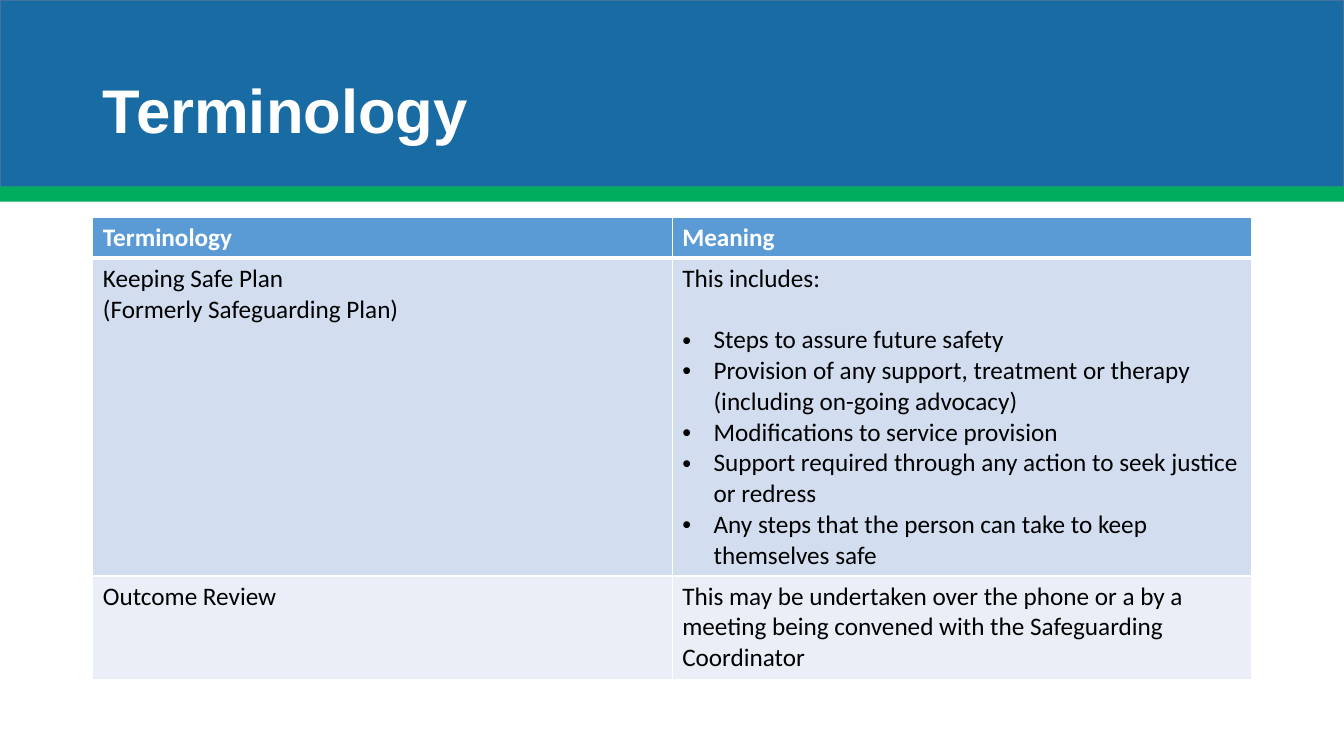
import pptx
import pptx.dml.color
import pptx.enum.shapes
import pptx.enum.text
import pptx.oxml
import pptx.oxml.ns
import pptx.util
from pptx.dml.color import RGBColor
from pptx.util import Cm, Pt

BLUE = RGBColor(0x19, 0x6B, 0xA3)
BLUE_EDGE = RGBColor(0x43, 0x73, 0x9E)
GREEN = RGBColor(0x00, 0xAC, 0x5D)
HEADER_FILL = RGBColor(0x5B, 0x9B, 0xD5)
DARK_ROW = RGBColor(0xD2, 0xDE, 0xEF)
LIGHT_ROW = RGBColor(0xEA, 0xEF, 0xF7)
WHITE = RGBColor(0xFF, 0xFF, 0xFF)
BLACK = RGBColor(0x00, 0x00, 0x00)

TITLE = "Terminology"
BULLET = "•"
ROWS = [
    (["Terminology"], ["Meaning"]),
    (
        ["Keeping Safe Plan", "(Formerly Safeguarding Plan)"],
        [
            "This includes:",
            "• Steps to assure future safety",
            "• Provision of any support, treatment or therapy (including on-going advocacy)",
            "• Modifications to service provision",
            "• Support required through any action to seek justice or redress",
            "• Any steps that the person can take to keep themselves safe",
        ],
    ),
    (
        ["Outcome Review"],
        ["This may be undertaken over the phone or a by a meeting being convened "
         "with the Safeguarding Coordinator"],
    ),
]
ROW_STYLES = [
    (Cm(1.03), HEADER_FILL, WHITE),
    (Cm(7.98), DARK_ROW, BLACK),
    (Cm(2.6), LIGHT_ROW, BLACK),
]

SLIDE_WIDTH, SLIDE_HEIGHT = Cm(33.87), Cm(19.05)
BANNER_HEIGHT, STRIPE_HEIGHT = Cm(4.7), Cm(0.38)
LEFT, TABLE_TOP, COLUMN_WIDTH = Cm(2.34), Cm(5.48), Cm(14.6)
BULLET_INDENT = Cm(0.79)
LINE_HEIGHT = Pt(22)


def add_band(slide, top, height, color, edge=None):
    band = slide.shapes.add_shape(
        pptx.enum.shapes.MSO_SHAPE.RECTANGLE, 0, top, SLIDE_WIDTH, height)
    band.shadow.inherit = False
    band.fill.solid()
    band.fill.fore_color.rgb = color
    if edge is None:
        band.line.fill.background()
    else:
        band.line.color.rgb = edge
        band.line.width = Pt(1)


def add_title(slide):
    title = slide.shapes.title
    title.left, title.top, title.width, title.height = LEFT, Cm(1.02), Cm(27.89), Cm(3.68)
    title.text_frame.text = TITLE
    title.text_frame.vertical_anchor = pptx.enum.text.MSO_ANCHOR.MIDDLE
    paragraph = title.text_frame.paragraphs[0]
    paragraph.alignment = pptx.enum.text.PP_ALIGN.LEFT
    paragraph.line_spacing = 0.9
    set_font(paragraph, "Arial", 44, WHITE, True)
    title.element.getparent().append(title.element)


def set_font(paragraph, name, size, color, bold):
    paragraph.font.name = name
    paragraph.font.size = Pt(size)
    paragraph.font.bold = bold
    paragraph.font.color.rgb = color


def set_borders(cell, bottom_width):
    properties = cell._tc.get_or_add_tcPr()
    for side, width in zip("LRTB", (1, 1, 1, bottom_width)):
        properties.append(pptx.oxml.parse_xml(
            f'<a:ln{side} {pptx.oxml.ns.nsdecls("a")} w="{Pt(width)}">'
            f'<a:solidFill><a:srgbClr val="{WHITE}"/></a:solidFill></a:ln{side}>'))


def add_bullet(paragraph):
    properties = paragraph._p.get_or_add_pPr()
    properties.set("marL", str(BULLET_INDENT))
    properties.set("indent", str(-BULLET_INDENT))
    for tag, attribute, value in (("buFont", "typeface", "Arial"), ("buChar", "char", BULLET)):
        properties.append(pptx.oxml.parse_xml(
            f'<a:{tag} {pptx.oxml.ns.nsdecls("a")} {attribute}="{value}"/>'))


def fill_cell(cell, lines, fill, color, is_header):
    set_borders(cell, 3 if is_header else 1)
    cell.fill.solid()
    cell.fill.fore_color.rgb = fill
    cell.text_frame.text = "\n".join(line.removeprefix(BULLET).strip() for line in lines)
    after_intro = False
    for line, paragraph in zip(lines, cell.text_frame.paragraphs):
        is_bullet = line.startswith(BULLET)
        if is_bullet:
            add_bullet(paragraph)
            if after_intro:
                paragraph.space_before = LINE_HEIGHT
        after_intro = not is_bullet
        set_font(paragraph, "Calibri", 18, color, is_header)


def add_terms(slide):
    height = sum(style[0] for style in ROW_STYLES)
    table = slide.shapes.add_table(
        len(ROWS), 2, LEFT, TABLE_TOP, 2 * COLUMN_WIDTH, height).table
    for column in table.columns:
        column.width = COLUMN_WIDTH
    for row_index, (cells, style) in enumerate(zip(ROWS, ROW_STYLES)):
        row_height, fill, color = style
        table.rows[row_index].height = row_height
        for column_index, lines in enumerate(cells):
            fill_cell(table.cell(row_index, column_index), lines, fill, color, row_index == 0)


def main():
    presentation = pptx.Presentation()
    presentation.slide_width, presentation.slide_height = SLIDE_WIDTH, SLIDE_HEIGHT
    slide = presentation.slides.add_slide(presentation.slide_layouts[5])
    add_band(slide, 0, BANNER_HEIGHT, BLUE, BLUE_EDGE)
    add_band(slide, BANNER_HEIGHT, STRIPE_HEIGHT, GREEN)
    add_title(slide)
    add_terms(slide)
    presentation.save("out.pptx")


if __name__ == "__main__":
    main()
